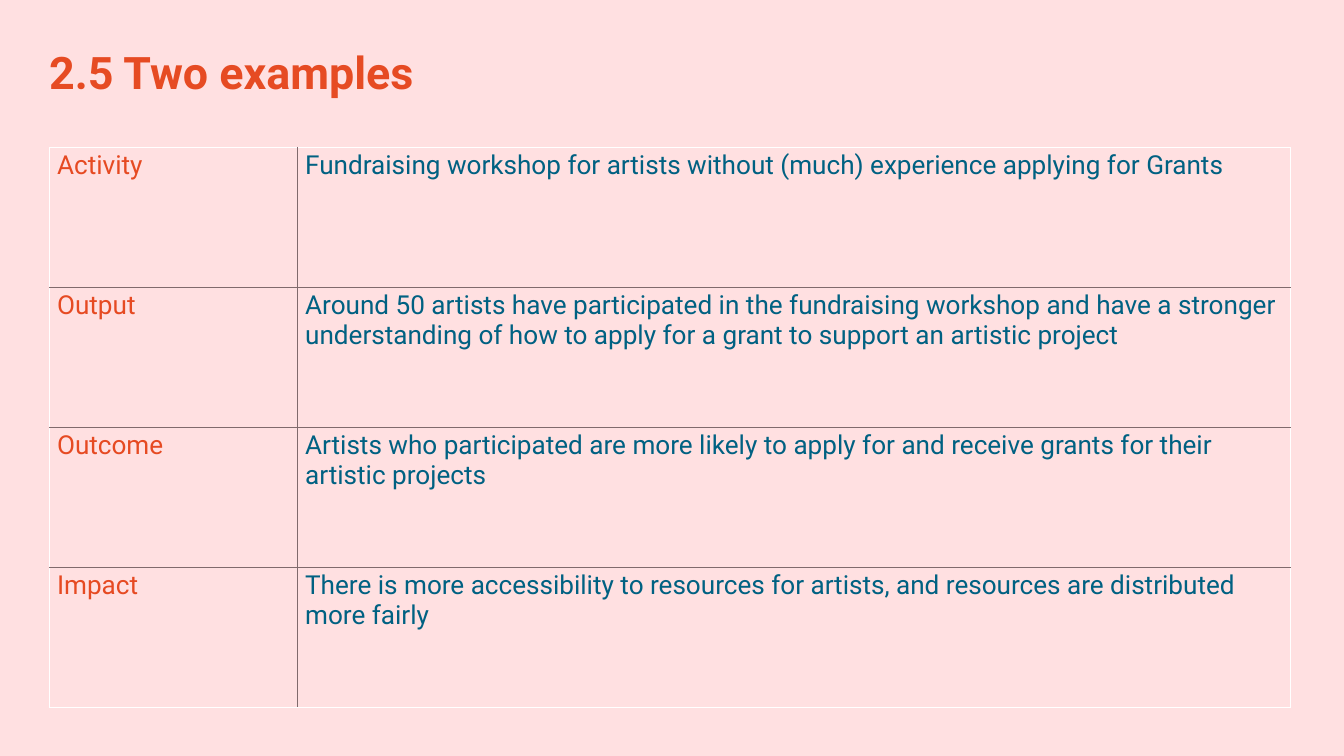
from lxml import etree
from pptx import Presentation
from pptx.dml.color import RGBColor
from pptx.enum import text
from pptx.oxml import ns
from pptx.util import Pt

# Content
TITLE = "2.5 Two examples"
ROWS = [
    ("Activity", "Fundraising workshop for artists without (much) experience applying for Grants"),
    ("Output", "Around 50 artists have participated in the fundraising workshop and have a stronger "
               "understanding of how to apply for a grant to support an artistic project"),
    ("Outcome", "Artists who participated are more likely to apply for and receive grants for their "
                "artistic projects"),
    ("Impact", "There is more accessibility to resources for artists, and resources are distributed "
               "more fairly"),
]

# Style, lengths in points
FONT = "Roboto"
PINK, ORANGE = "FFE0E1", "E64B23"
COLUMN_COLORS = ("E64A22", "006182")
INNER_LINE, OUTER_LINE = "806A6C", "FFFFFF"
LEFT, TOP = 53.3, 157.7
COLUMN_WIDTHS = (265.8, 1064)
ROW_HEIGHT = 150
INSET, INDENT, LINE_WIDTH = 2.9, 5, 0.85


def color(code):
    return RGBColor.from_string(code)


def style(para, size, code, bold=False):
    font = para.font
    font.name, font.size, font.bold = FONT, Pt(size), bold
    font.color.rgb = color(code)


def add_border(cell, side, code):
    line = etree.SubElement(cell._tc.get_or_add_tcPr(), ns.qn(f"a:ln{side}"), w=str(Pt(LINE_WIDTH)))
    fill = etree.SubElement(line, ns.qn("a:solidFill"))
    etree.SubElement(fill, ns.qn("a:srgbClr"), val=code)


def fill_cell(cell, words, code, outer_sides):
    for side in "LRTB":
        add_border(cell, side, OUTER_LINE if side in outer_sides else INNER_LINE)
    cell.fill.background()
    cell.margin_left = cell.margin_right = cell.margin_top = cell.margin_bottom = Pt(INSET)
    cell.text = words
    para = cell.text_frame.paragraphs[0]
    para._p.get_or_add_pPr().set("marL", str(Pt(INDENT)))
    style(para, 28, code)


def main():
    deck = Presentation()
    deck.slide_width, deck.slide_height = Pt(1440), Pt(810)
    page = deck.slides.add_slide(deck.slide_layouts[5])
    page.background.fill.solid()
    page.background.fill.fore_color.rgb = color(PINK)

    # Title
    title = page.shapes.title
    title.left, title.top, title.width, title.height = Pt(52.6), Pt(48.2), Pt(1334), Pt(56.2)
    frame = title.text_frame
    frame.text = TITLE
    frame.margin_left = frame.margin_right = frame.margin_top = frame.margin_bottom = 0
    frame.vertical_anchor = text.MSO_ANCHOR.TOP
    frame.auto_size = text.MSO_AUTO_SIZE.NONE
    para = frame.paragraphs[0]
    para.alignment = text.PP_ALIGN.LEFT
    para.line_spacing = Pt(57)
    style(para, 48, ORANGE, bold=True)

    # Table
    table = page.shapes.add_table(
        len(ROWS), len(COLUMN_WIDTHS), Pt(LEFT), Pt(TOP),
        Pt(sum(COLUMN_WIDTHS)), Pt(ROW_HEIGHT * len(ROWS))).table
    table.first_row = table.horz_banding = False
    for column, width in zip(table.columns, COLUMN_WIDTHS):
        column.width = Pt(width)
    for i, row in enumerate(ROWS):
        table.rows[i].height = Pt(ROW_HEIGHT)
        vertical = {0: "T", len(ROWS) - 1: "B"}.get(i, "")
        for j, words in enumerate(row):
            fill_cell(table.cell(i, j), words, COLUMN_COLORS[j], "LR"[j] + vertical)

    deck.save("out.pptx")


if __name__ == "__main__":
    main()
